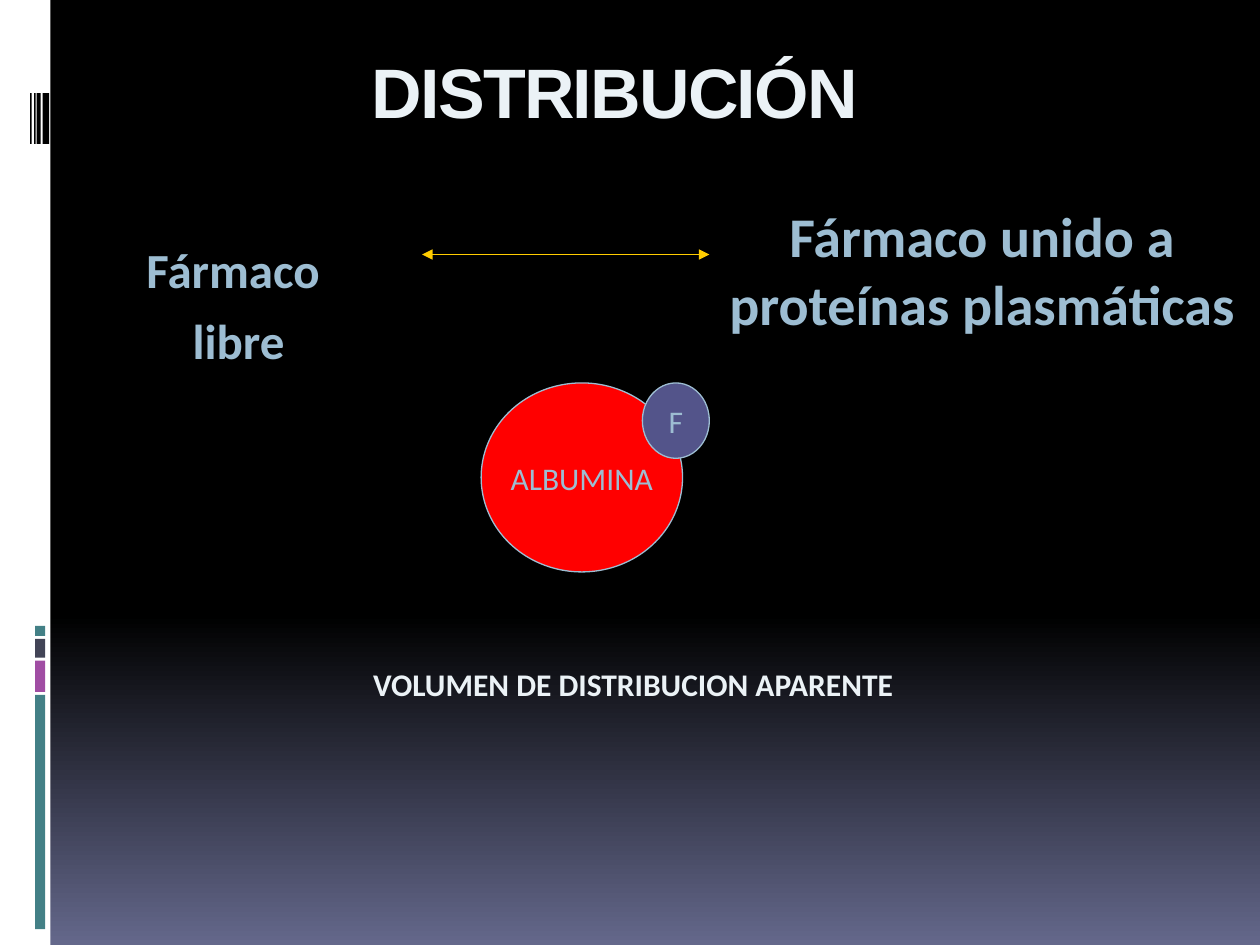
from lxml.etree import SubElement
from pptx import Presentation
from pptx.dml.color import RGBColor
from pptx.enum.shapes import MSO_CONNECTOR, MSO_SHAPE
from pptx.enum.text import MSO_ANCHOR, PP_ALIGN
from pptx.oxml.ns import qn
from pptx.util import Cm, Pt

COLORS = {
    "black": "000000", "white": "FFFFFF", "dusk": "64688B", "teal": "438086",
    "purple": "A04DA3", "slate": "424456", "pale": "EBF2F6", "sky": "9DBDD2",
    "yellow": "FFCC00", "red": "FF0000", "indigo": "53548A",
}


def color(name):
    """Return the named colour."""
    return RGBColor.from_string(COLORS[name])


def add_span(para, text, size=18, font="Calibri", fill="sky", bold=False, spacing=None):
    """Append formatted text to a paragraph."""
    span = para.add_run()
    span.text = text
    span.font.size = Pt(size)
    span.font.name = font
    span.font.bold = bold
    span.font.color.rgb = color(fill)
    if spacing is not None:
        span.font._element.set("spc", str(spacing))


def add_text(page, box, lines, top=0.13, before=0, **style):
    """Add a text box with one centred paragraph per line."""
    frame = page.shapes.add_textbox(*map(Cm, box)).text_frame
    frame.word_wrap = True
    frame.margin_top = Cm(top)
    for index, line in enumerate(lines):
        para = frame.paragraphs[0] if index == 0 else frame.add_paragraph()
        para.alignment = PP_ALIGN.CENTER
        para.space_before = Pt(before if index else 0)
        add_span(para, line, **style)
    return frame


def add_solid(shapes, kind, box, fill, outline=None):
    """Add a flat preset shape."""
    shape = shapes.add_shape(kind, *map(Cm, box))
    shape.shadow.inherit = False
    shape.fill.solid()
    shape.fill.fore_color.rgb = color(fill)
    if outline:
        shape.line.color.rgb = color(outline)
        shape.line.width = Pt(0.75)
    else:
        shape.line.fill.background()
    return shape


def paint_background(page):
    """Fade the page from black to dusk in its lower third."""
    fill = page.background.fill
    fill.gradient()
    fill.gradient_angle = 270
    for stop, position, name in zip(fill.gradient_stops, (0.65, 1), ("black", "dusk")):
        stop.position = position
        stop.color.rgb = color(name)


def add_side_band(page, box):
    """Draw the white band with its barcode and coloured bars."""
    left, top, _, _ = box
    add_solid(page.shapes, MSO_SHAPE.RECTANGLE, box, "white")
    for offset, width in ((0.61, 0.03), (0.69, 0.03), (0.74, 0.08), (0.86, 0.13)):
        bar = (left + offset, top + 1.88, width, 1.02)
        add_solid(page.shapes, MSO_SHAPE.RECTANGLE, bar, "black")
    bar_top = top + 12.62
    for height, fill in ((0.2, "teal"), (0.38, "slate"), (0.63, "purple"), (4.72, "teal")):
        bar = (left + 0.71, bar_top, 0.2, height)
        add_solid(page.shapes, MSO_SHAPE.RECTANGLE, bar, fill)
        bar_top += height + 0.06


def add_balance(page, box):
    """Place free and bound drug on either side of a double arrow."""
    left, top, width, height = box
    add_text(page, (left + 0.1, top, 9.42, height), ["Fármaco ", "libre"],
             top=1.7, before=7, size=28, bold=True)
    bound_width = 11.2
    add_text(page, (left + width - bound_width, top + 0.81, bound_width, 4.32),
             ["Fármaco unido a proteínas plasmáticas"], size=32, bold=True)
    level = Cm(top + 2)
    arrow = page.shapes.add_connector(
        MSO_CONNECTOR.STRAIGHT, Cm(left + 8.51), level, Cm(left + 14.3), level)
    arrow.line.color.rgb = color("yellow")
    arrow.line.width = Pt(0.75)
    for end in ("headEnd", "tailEnd"):
        SubElement(arrow.line._get_or_add_ln(), qn(f"a:{end}"), type="triangle")
    SubElement(arrow._element.spPr, qn("a:effectLst"))


def add_complex(page, box):
    """Group the albumin molecule with the drug bound to it."""
    left, top, width, height = box
    group = page.shapes.add_group_shape()
    drug_width = 1.35
    molecules = (
        ("ALBUMINA", "red", (left, top, 4.06, height)),
        ("F", "indigo", (left + width - drug_width, top, drug_width, 1.52)),
    )
    for name, fill, place in molecules:
        frame = add_solid(group.shapes, MSO_SHAPE.OVAL, place, fill, "sky").text_frame
        frame.word_wrap = False
        frame.vertical_anchor = MSO_ANCHOR.MIDDLE
        para = frame.paragraphs[0]
        para.alignment = PP_ALIGN.CENTER
        add_span(para, name)


def main():
    """Build the drug distribution page."""
    deck = Presentation()
    deck.slide_width, deck.slide_height = Cm(25.4), Cm(19.05)
    page = deck.slides.add_slide(deck.slide_layouts[6])
    paint_background(page)
    add_side_band(page, (0, 0, 1.02, 19.05))
    add_text(page, (1.7, 0.71, 21.39, 2.54), ["DISTRIBUCIÓN"], top=0.27,
             size=40, font="Arial", fill="pale", bold=True, spacing=-100)
    add_balance(page, (0, 3.13, 25.4, 11.89))
    add_complex(page, (9.7, 7.72, 4.6, 3.81))
    caption = add_text(page, (1.3, 12.93, 23.19, 1.45),
                       ["VOLUMEN DE DISTRIBUCION APARENTE"], fill="pale", bold=True)
    add_span(caption.paragraphs[0], " ", size=28, font="Montserrat", fill="pale")
    deck.save("out.pptx")


if __name__ == "__main__":
    main()
